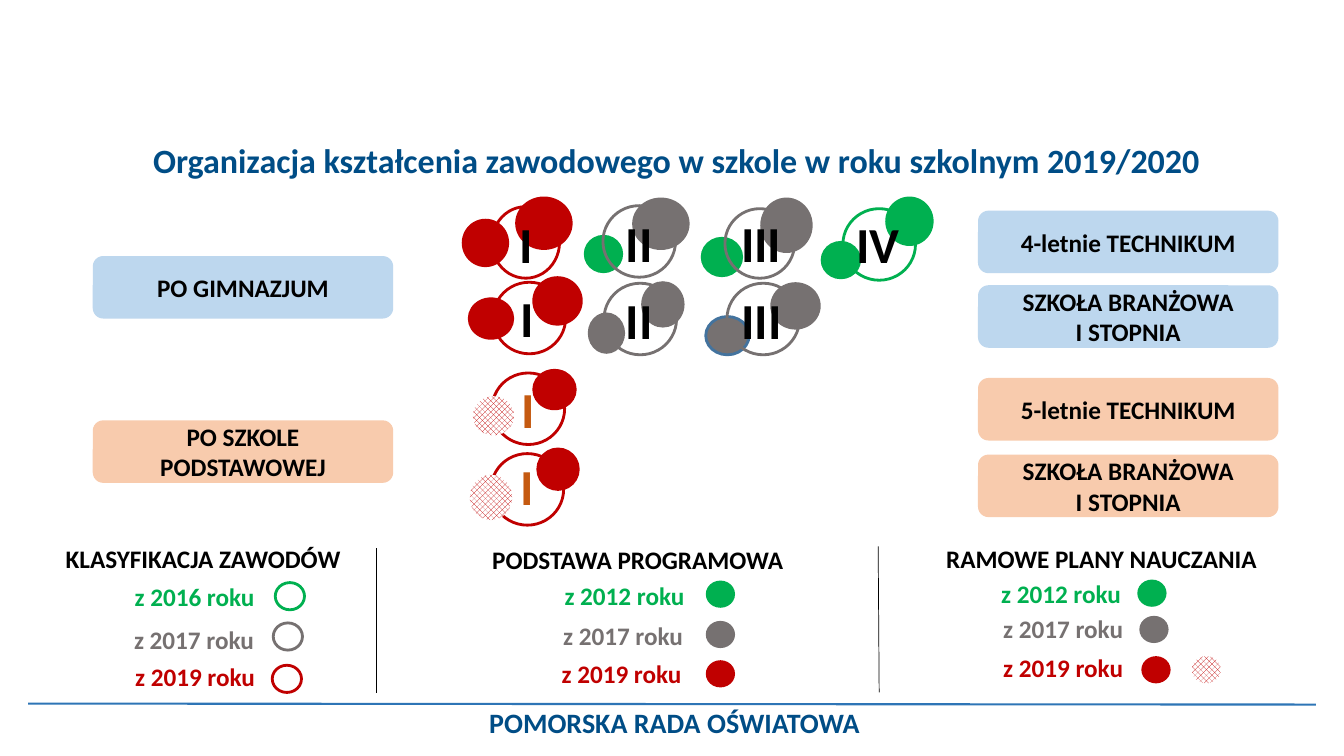
from lxml import etree
from pptx import Presentation
from pptx.dml.color import RGBColor
from pptx.enum.dml import MSO_PATTERN
from pptx.enum.shapes import MSO_CONNECTOR, MSO_SHAPE as SHAPE
from pptx.enum.text import MSO_ANCHOR as ANCHOR, PP_ALIGN
from pptx.oxml.ns import qn
from pptx.util import Pt

PX = 9144  # 100 px to the inch
GREEN, GRAY, RED = "00B050", "767171", "C00000"
BLACK, NAVY, BROWN = "000000", "004D86", "C55A11"
BLUE_FILL, ORANGE_FILL = "BDD7EE", "F8CBAD"
HATCH = "hatch"


def color(value):
    return RGBColor.from_string(value)


def add_box(shapes, kind, box, fill=None, line=None, lines=(), size=18,
            font_color=BLACK, anchor=ANCHOR.MIDDLE):
    """Add a preset shape, or a text box when kind is None; box is in px."""
    place = [value * PX for value in box]
    if kind is None:
        shape = shapes.add_textbox(*place)
    else:
        shape = shapes.add_shape(kind, *place)
        shape.shadow.inherit = False
        if fill == HATCH:
            shape.fill.patterned()
            shape.fill.pattern = MSO_PATTERN.OUTLINED_DIAMOND
            shape.fill.fore_color.rgb = color(RED)
            shape.fill.back_color.rgb = color("FFFFFF")
        elif fill:
            shape.fill.solid()
            shape.fill.fore_color.rgb = color(fill)
        else:
            shape.fill.background()
        if line:
            shape.line.color.rgb = color(line)
            shape.line.width = Pt(2)
        else:
            shape.line.fill.background()
    if lines:
        frame = shape.text_frame
        frame.word_wrap = True
        frame.vertical_anchor = anchor
        for index, text in enumerate(lines):
            paragraph = frame.add_paragraph() if index else frame.paragraphs[0]
            paragraph.alignment = PP_ALIGN.CENTER
            run = paragraph.add_run()
            run.text = text
            run.font.name = "Calibri"
            run.font.size = Pt(size)
            run.font.bold = True
            run.font.color.rgb = color(font_color)
    return shape


presentation = Presentation()
presentation.slide_width = 1333 * PX
presentation.slide_height = 750 * PX
slide = presentation.slides.add_slide(presentation.slide_layouts[6])
shapes = slide.shapes

# Title and footer
title = add_box(shapes, None, (96, 138, 1150, 88), size=24.3, font_color=NAVY, anchor=ANCHOR.TOP,
                lines=["Organizacja kształcenia zawodowego w szkole w roku szkolnym 2019/2020"])
title.text_frame.paragraphs[0].line_spacing = 0.9
add_box(shapes, None, (413, 695, 512, 44), size=20, font_color=NAVY, anchor=ANCHOR.TOP,
        lines=["POMORSKA RADA OŚWIATOWA"])

# Previous school on the left, current school on the right
branch_school = ["SZKOŁA BRANŻOWA", "I STOPNIA"]
for left, top, fill, lines in [
    (92, 254, BLUE_FILL, ["PO GIMNAZJUM"]),
    (92, 417, ORANGE_FILL, ["PO SZKOLE PODSTAWOWEJ"]),
    (970, 209, BLUE_FILL, ["4-letnie TECHNIKUM"]),
    (970, 283, BLUE_FILL, branch_school),
    (970, 375, ORANGE_FILL, ["5-letnie TECHNIKUM"]),
    (970, 451, ORANGE_FILL, branch_school),
]:
    add_box(shapes, SHAPE.ROUNDED_RECTANGLE, (left, top, 298, 62), fill, lines=lines)

# Classes: numeral, its colour and box; then colour and box of the
# classification ring, the curriculum disc and the teaching plan disc
classes = [
    ("I", BLACK, (494, 210, 56, 62), RED, (488, 205, 67, 71),
     RED, (458, 217, 47, 48), RED, (511, 195, 57, 53)),
    ("II", BLACK, (606, 209, 56, 62), GRAY, (598, 204, 72, 71),
     GREEN, (579, 233, 39, 38), GRAY, (627, 196, 57, 52)),
    ("III", BLACK, (717, 209, 76, 62), GRAY, (719, 207, 69, 69),
     GREEN, (695, 235, 42, 40), GRAY, (754, 196, 52, 55)),
    ("IV", BLACK, (832, 210, 78, 62), GREEN, (836, 207, 72, 71),
     GREEN, (814, 239, 40, 38), GREEN, (878, 195, 48, 49)),
    ("I", BLACK, (494, 284, 58, 62), RED, (489, 280, 72, 71),
     RED, (464, 295, 46, 42), RED, (528, 274, 50, 49)),
    ("II", BLACK, (606, 286, 56, 62), GRAY, (599, 281, 72, 71),
     GRAY, (583, 310, 37, 41), GRAY, (636, 279, 43, 46)),
    ("III", BLACK, (718, 286, 75, 62), GRAY, (721, 281, 72, 71),
     GRAY, (700, 314, 43, 38), GRAY, (764, 280, 50, 47)),
    ("I", BROWN, (495, 374, 58, 62), RED, (488, 370, 72, 71),
     HATCH, (469, 393, 41, 39), RED, (528, 366, 44, 41)),
    ("I", BROWN, (495, 451, 56, 62), RED, (487, 450, 72, 71),
     HATCH, (466, 471, 42, 45), RED, (532, 444, 43, 43)),
]
for (numeral, numeral_color, numeral_box, ring_color, ring_box,
     curriculum_color, curriculum_box, plan_color, plan_box) in classes:
    hatched = curriculum_color == HATCH
    outlined = numeral == "III" and curriculum_color == GRAY
    if not hatched:
        add_box(shapes, SHAPE.FLOWCHART_CONNECTOR, curriculum_box, curriculum_color,
                "43739E" if outlined else None)
    add_box(shapes, SHAPE.FLOWCHART_CONNECTOR, plan_box, plan_color)
    add_box(shapes, SHAPE.ROUNDED_RECTANGLE, numeral_box, lines=[numeral], size=36,
            font_color=numeral_color)
    add_box(shapes, SHAPE.FLOWCHART_CONNECTOR, ring_box, line=ring_color)
    if hatched:
        add_box(shapes, SHAPE.FLOWCHART_CONNECTOR, curriculum_box, HATCH)

# Dividers and footer rule
for start_x, start_y, end_x, end_y, line_color, width in [
    (373, 544, 373, 688, BLACK, 0.5),
    (871, 542, 872, 687, BLACK, 0.5),
    (28, 698, 1305, 699, "2E75B6", 1.5),
]:
    connector = shapes.add_connector(MSO_CONNECTOR.STRAIGHT, start_x * PX, start_y * PX,
                                     end_x * PX, end_y * PX)
    connector.line.color.rgb = color(line_color)
    connector.line.width = Pt(width)
    etree.SubElement(connector._element.spPr, qn("a:effectLst"))

# Legends: heading, its box, whether the marks are rings, and for each
# year the text's left, top and width and the mark's left and top
legends = [
    ("KLASYFIKACJA ZAWODÓW", (45, 527, 313, 54), True,
     [("2016", GREEN, 109, 572, 168, 273, 578),
      ("2017", GRAY, 119, 614, 147, 271, 618),
      ("2019", RED, 121, 651, 145, 270, 660)]),
    ("PODSTAWA PROGRAMOWA", (470, 528, 325, 54), False,
     [("2012", GREEN, 541, 571, 157, 700, 576),
      ("2017", GRAY, 544, 610, 148, 700, 616),
      ("2019", RED, 542, 648, 149, 700, 655)]),
    ("RAMOWE PLANY NAUCZANIA", (909, 527, 367, 54), False,
     [("2012", GREEN, 941, 569, 223, 1128, 575),
      ("2017", GRAY, 943, 604, 223, 1130, 611),
      ("2019", RED, 943, 642, 223, 1132, 651)]),
]
for heading, heading_box, rings, years in legends:
    legend = shapes.add_group_shape().shapes
    add_box(legend, SHAPE.ROUNDED_RECTANGLE, heading_box, lines=[heading])
    for year, year_color, left, top, width, mark_left, mark_top in years:
        add_box(legend, None, (left, top, width, 40), lines=[f"z {year} roku"],
                font_color=year_color, anchor=ANCHOR.TOP)
        add_box(legend, SHAPE.FLOWCHART_CONNECTOR, (mark_left, mark_top, 29, 27),
                fill=None if rings else year_color, line=year_color if rings else None)
add_box(legend, SHAPE.FLOWCHART_CONNECTOR, (1182, 651, 29, 27), HATCH)

presentation.save("out.pptx")
